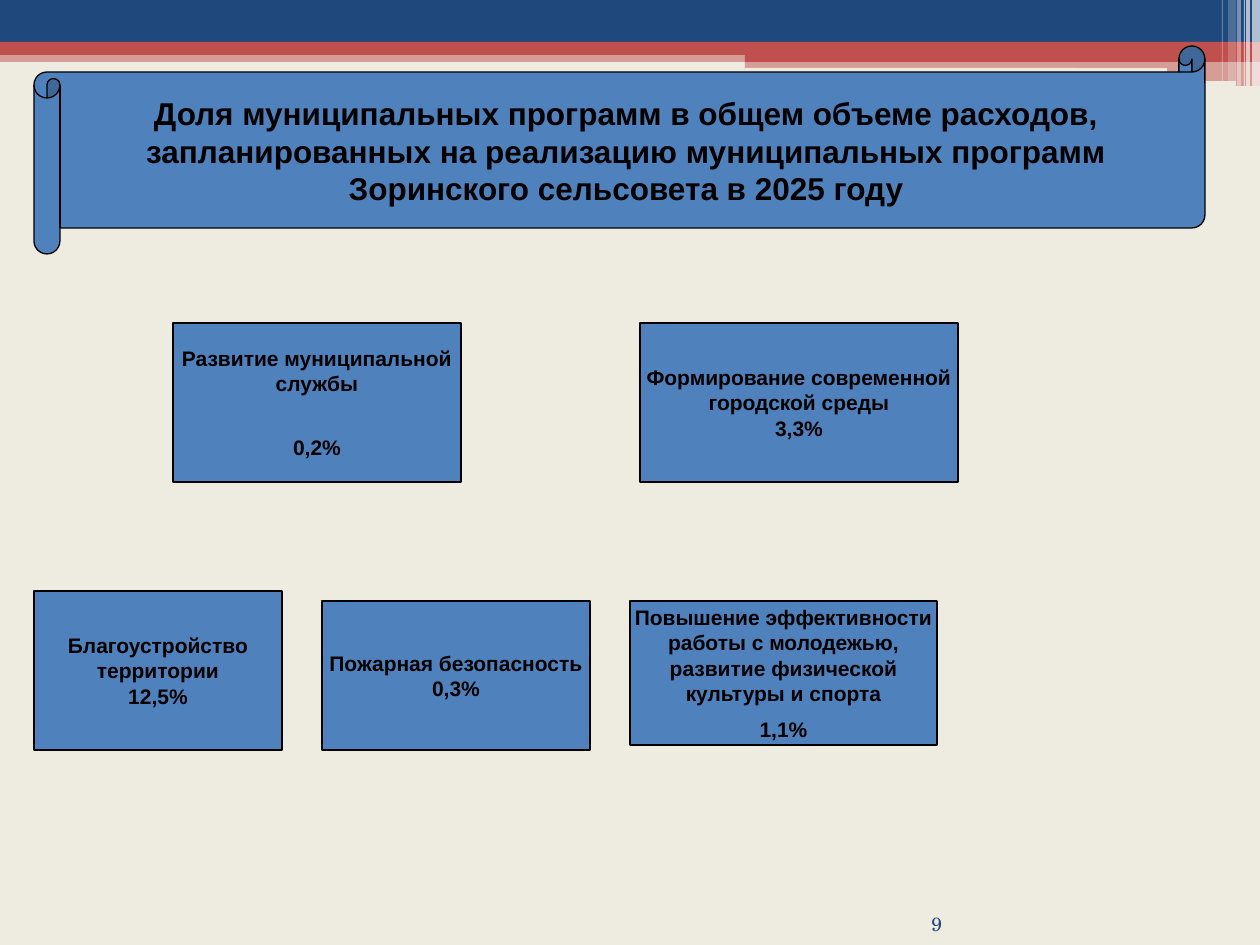
"""Build the slide on the share of municipal programmes in 2025 spending."""
import pptx
import pptx.util
import pptx.dml.color
import pptx.enum.shapes
import pptx.enum.text
import pptx.oxml.ns
import lxml.etree

PX = 914400 / 126
COLORS = {"navy": "1F497D", "red": "C0504D", "blue": "4F81BD",
          "cream": "EEECE1", "white": "FFFFFF", "black": "000000"}
SHAPE = pptx.enum.shapes.MSO_SHAPE
ALIGN = pptx.enum.text.PP_ALIGN
ANCHOR = pptx.enum.text.MSO_ANCHOR

prs = pptx.Presentation()
prs.slide_width = round(1260 * PX)
prs.slide_height = round(945 * PX)
s = prs.slides.add_slide(prs.slide_layouts[5])
s.background.fill.solid()
s.background.fill.fore_color.rgb = pptx.dml.color.RGBColor.from_string(COLORS["cream"])


def add_shape(kind, box, color, alpha=100, outlined=False):
    sp = s.shapes.add_shape(kind, *[round(v * PX) for v in box])
    sp.shadow.inherit = False
    sp.fill.solid()
    sp.fill.fore_color.rgb = pptx.dml.color.RGBColor.from_string(COLORS[color])
    if alpha < 100:
        clr = sp.fill._xPr.find(".//" + pptx.oxml.ns.qn("a:srgbClr"))
        lxml.etree.SubElement(clr, pptx.oxml.ns.qn("a:alpha"), val=str(alpha * 1000))
    if outlined:
        sp.line.color.rgb = pptx.dml.color.RGBColor.from_string(COLORS["black"])
        sp.line.width = pptx.util.Pt(0.75)
    else:
        sp.line.fill.background()
    return sp


def write(sp, lines, size, color="black", font="Arial", bold=True,
          align=ALIGN.CENTER, anchor=ANCHOR.MIDDLE):
    tf = sp.text_frame
    tf.text = "\n".join(lines)
    tf.word_wrap = False
    tf.auto_size = pptx.enum.text.MSO_AUTO_SIZE.NONE
    tf.vertical_anchor = anchor
    tf.margin_left = tf.margin_right = tf.margin_top = tf.margin_bottom = 0
    for p in tf.paragraphs:
        p.alignment = align
        for r in p.runs:
            r.font.size = pptx.util.Pt(size)
            r.font.name = font
            r.font.bold = bold
            r.font.color.rgb = pptx.dml.color.RGBColor.from_string(COLORS[color])
    return tf


bands = [
    (SHAPE.RECTANGLE, (0, 50, 1260, 12), "red", 50),
    (SHAPE.RECTANGLE, (0, 0, 1260, 43), "navy", 100),
    (SHAPE.RECTANGLE, (0, 42, 1260, 13), "red", 100),
    (SHAPE.RECTANGLE, (745, 49, 515, 13), "red", 100),
    (SHAPE.RECTANGLE, (745, 61, 515, 25), "red", 50),
    (SHAPE.ROUNDED_RECTANGLE, (745, 68, 422, 4), "cream", 100),
    (SHAPE.ROUNDED_RECTANGLE, (1016, 81, 220, 5), "cream", 100),
]
for kind, box, color, alpha in bands:
    add_shape(kind, box, color, alpha)

stripes = [(1252, 8, 86, 65), (1246, 4, 86, 65), (1244, 1, 86, 60),
           (1237, 4, 86, 40), (1228, 8, 81, 20), (1222, 1, 81, 30)]
for left, width, height, alpha in stripes:
    add_shape(SHAPE.RECTANGLE, (left, 0, width, height), "white", alpha)

number = s.shapes.add_textbox(*[round(v * PX) for v in (862, 903, 80, 32)])
write(number, ["9"], 11, "navy", "TeX Gyre Schola", False, ALIGN.RIGHT, ANCHOR.BOTTOM)

programmes = [
    ((173, 323, 288, 159), ["Развитие муниципальной", "службы", "0,2%"], 22),
    ((640, 323, 318, 159), ["Формирование современной", "городской среды", "3,3%"], 0),
    ((34, 591, 248, 159), ["Благоустройство", "территории", "12,5%"], 0),
    ((322, 601, 268, 149), ["Пожарная безопасность", "0,3%"], 0),
    ((630, 601, 307, 144), ["Повышение эффективности", "работы с молодежью,",
                            "развитие физической", "культуры и спорта", "1,1%"], 6),
]
for box, lines, gap in programmes:
    sp = add_shape(SHAPE.FLOWCHART_PROCESS, box, "blue", outlined=True)
    tf = write(sp, lines, 12)
    tf.paragraphs[-1].space_before = pptx.util.Pt(gap)

scroll = add_shape(SHAPE.HORIZONTAL_SCROLL, (34, 46, 1171, 208), "blue", outlined=True)
scroll.adjustments[0] = 0.125

title = s.shapes.title
title.left, title.top, title.width, title.height = [round(v * PX) for v in (60, 72, 1132, 157)]
write(title, ["Доля муниципальных программ в общем объеме расходов,",
              "запланированных на реализацию муниципальных программ",
              "Зоринского сельсовета в 2025 году"], 18)
s.shapes._spTree.append(title._element)

prs.save("out.pptx")
